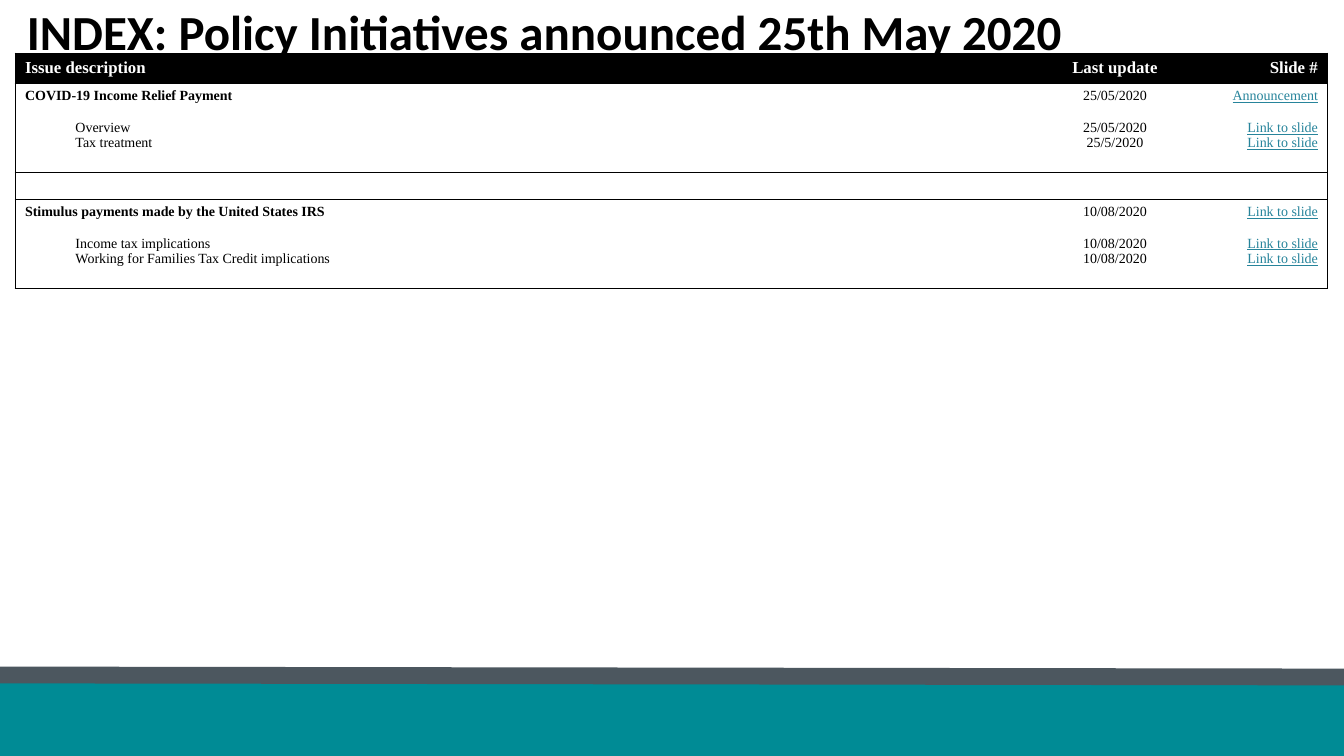
import pptx
import pptx.util
import pptx.dml.color
import pptx.enum.shapes
import pptx.enum.text
import pptx.oxml.ns
from lxml import etree

RGBColor = pptx.dml.color.RGBColor
ALIGN = pptx.enum.text.PP_ALIGN
qn = pptx.oxml.ns.qn

BLACK = RGBColor(0x00, 0x00, 0x00)
WHITE = RGBColor(0xFF, 0xFF, 0xFF)
TEAL = RGBColor(0x00, 0x8B, 0x95)
SLATE = RGBColor(0x4C, 0x57, 0x5F)
LINK = RGBColor(0x27, 0x84, 0x9B)

WIDTH, HEIGHT = 1344, 756
COLUMNS = [1015, 170, 128]
ROW_HEIGHTS = [29, 89, 26, 89]
ALIGNMENTS = [ALIGN.LEFT, ALIGN.CENTER, ALIGN.RIGHT]
HEADINGS = ["Issue description", "Last update", "Slide #"]
ISSUES = {
    1: [
        ("COVID-19 Income Relief Payment", "25/05/2020", "Announcement"),
        ("Overview", "25/05/2020", "Link to slide"),
        ("Tax treatment", "25/5/2020", "Link to slide"),
    ],
    3: [
        ("Stimulus payments made by the United States IRS", "10/08/2020", "Link to slide"),
        ("Income tax implications", "10/08/2020", "Link to slide"),
        ("Working for Families Tax Credit implications", "10/08/2020", "Link to slide"),
    ],
}


def px(n):
    return pptx.util.Emu(round(n * 914400 / 100.8))


def add_run(p, text, font, size, color, bold=False, underline=False):
    r = p.add_run()
    r.text = text
    r.font.name = font
    r.font.size = pptx.util.Pt(size)
    r.font.color.rgb = color
    r.font.bold = bold
    r.font.underline = underline


def add_footer(s, x, y, w, h):
    sp = s.shapes.add_shape(
        pptx.enum.shapes.MSO_SHAPE.RECTANGLE, px(x), px(y + 6), px(w), px(h - 6))
    sp.shadow.inherit = False
    sp.fill.solid()
    sp.fill.fore_color.rgb = TEAL
    sp.line.fill.background()
    rule = s.shapes.add_connector(
        pptx.enum.shapes.MSO_CONNECTOR.STRAIGHT, px(x), px(y), px(x + w), px(y + 2))
    rule.line.color.rgb = SLATE
    rule.line.width = pptx.util.Pt(12)
    etree.SubElement(rule._element.spPr, qn("a:effectLst"))


def add_title(s, x, y, w, h):
    tf = s.shapes.add_textbox(px(x), px(y), px(w), px(h)).text_frame
    tf.word_wrap = True
    tf.vertical_anchor = pptx.enum.text.MSO_ANCHOR.MIDDLE
    add_run(tf.paragraphs[0], "INDEX: Policy Initiatives announced 25th May 2020",
            "Calibri", 35, BLACK, bold=True)


def set_borders(cell, column):
    tcPr = cell._tc.get_or_add_tcPr()
    visible = {"lnL": column == 0, "lnR": column == len(COLUMNS) - 1,
               "lnT": True, "lnB": True}
    for side, shown in visible.items():
        ln = etree.SubElement(tcPr, qn("a:" + side), w="9525")
        fill = etree.SubElement(ln, qn("a:solidFill" if shown else "a:noFill"))
        if shown:
            etree.SubElement(fill, qn("a:srgbClr"), val=str(BLACK))


def fill_issue(cell, column, entries):
    tf = cell.text_frame
    for i, entry in enumerate(entries):
        p = tf.add_paragraph() if i else tf.paragraphs[0]
        p.alignment = ALIGNMENTS[column]
        if i == 1:
            p.space_before = pptx.util.Pt(11.5)
        if i and column == 0:
            pPr = p._p.get_or_add_pPr()
            pPr.set("marL", "457200")
            pPr.set("indent", "0")
        is_link = column == 2
        add_run(p, entry[column], "Times New Roman", 10, LINK if is_link else BLACK,
                bold=i == 0 and column == 0, underline=is_link)


def add_index(s, x, y, w, h):
    table = s.shapes.add_table(
        len(ROW_HEIGHTS), len(COLUMNS), px(x), px(y), px(w), px(h)).table
    table.horz_banding = False
    for column, width in zip(table.columns, COLUMNS):
        column.width = px(width)
    for i, height in enumerate(ROW_HEIGHTS):
        table.rows[i].height = px(height)
        for j, heading in enumerate(HEADINGS):
            cell = table.cell(i, j)
            set_borders(cell, j)
            cell.fill.solid()
            cell.fill.fore_color.rgb = WHITE if i else BLACK
            p = cell.text_frame.paragraphs[0]
            if i == 0:
                p.alignment = ALIGNMENTS[j]
                add_run(p, heading, "Times New Roman", 12, WHITE, bold=True)
            elif i in ISSUES:
                fill_issue(cell, j, ISSUES[i])
            else:
                etree.SubElement(p._p, qn("a:endParaRPr"), sz="1000")


def main():
    prs = pptx.Presentation()
    prs.slide_width, prs.slide_height = px(WIDTH), px(HEIGHT)
    s = prs.slides.add_slide(prs.slide_layouts[6])
    add_footer(s, 0, 675, WIDTH, HEIGHT - 675)
    add_title(s, 17, 0, 1311, 61)
    add_index(s, 15, 53, sum(COLUMNS), sum(ROW_HEIGHTS))
    prs.save("out.pptx")


if __name__ == "__main__":
    main()
